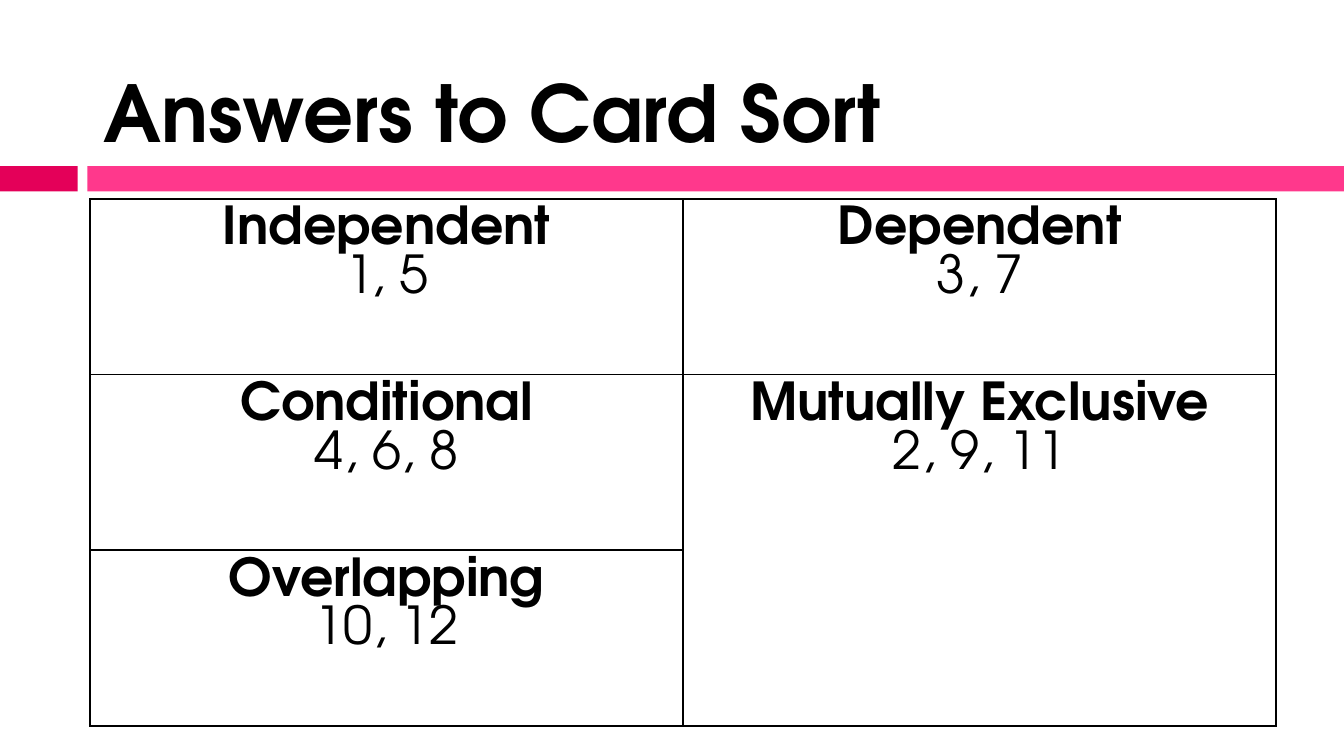
from typing import NamedTuple

from lxml.etree import SubElement
from pptx import Presentation
from pptx.dml.color import RGBColor
from pptx.enum.shapes import MSO_SHAPE as Preset
from pptx.enum.text import MSO_ANCHOR as Anchor, MSO_AUTO_SIZE as AutoSize, PP_ALIGN as Align
from pptx.oxml.ns import qn
from pptx.util import Cm, Pt

FONT = "TeX Gyre Adventor"
BLACK = RGBColor(0x00, 0x00, 0x00)
CRIMSON = RGBColor(0xE4, 0x00, 0x59)
PINK = RGBColor(0xFF, 0x38, 0x8C)

SLIDE_W, SLIDE_H = 25.4, 14.29  # cm
MARGIN = 1.7
TABLE_W, ROW_H = 22.42, 3.32
ROWS, COLS = 3, 2


class Band(NamedTuple):
    left: float
    width: float
    color: RGBColor


class Category(NamedTuple):
    row: int
    col: int
    name: str
    cards: str
    row_span: int = 1


BANDS = [Band(0, 1.47, CRIMSON), Band(1.65, SLIDE_W - 1.65, PINK)]

CATEGORIES = [
    Category(0, 0, "Independent", "1, 5"),
    Category(0, 1, "Dependent", "3, 7"),
    Category(1, 0, "Conditional", "4, 6, 8"),
    Category(1, 1, "Mutually Exclusive", "2, 9, 11", row_span=2),
    Category(2, 0, "Overlapping", "10, 12"),
]


def write(paragraph, text: str, *, size: float, bold: bool = False,
          align: Align = Align.LEFT, spacing=None) -> None:
    paragraph.alignment = align
    paragraph.line_spacing = spacing
    run = paragraph.add_run()
    run.text = text
    run.font.name = FONT
    run.font.size = Pt(size)
    run.font.bold = bold
    run.font.color.rgb = BLACK


def draw_band(slide, band: Band) -> None:
    bar = slide.shapes.add_shape(
        Preset.RECTANGLE, Cm(band.left), Cm(3.14), Cm(band.width), Cm(0.48))
    bar.shadow.inherit = False
    bar.fill.solid()
    bar.fill.fore_color.rgb = band.color
    bar.line.fill.background()


def outline_cell(cell) -> None:
    """Clear the fill and draw a thin black border on every side."""
    cell.fill.background()
    properties = cell._tc.get_or_add_tcPr()
    for position, side in enumerate(("lnL", "lnR", "lnT", "lnB")):
        border = SubElement(properties, qn(f"a:{side}"), w=str(Pt(1)))
        fill = SubElement(border, qn("a:solidFill"))
        SubElement(fill, qn("a:srgbClr"), val=str(BLACK))
        properties.insert(position, border)  # borders come before the fill


def fill_category(table, category: Category) -> None:
    cell = table.cell(category.row, category.col)
    if category.row_span > 1:
        cell.merge(table.cell(category.row + category.row_span - 1, category.col))
    frame = cell.text_frame
    style = dict(size=28, align=Align.CENTER, spacing=Pt(26.25))
    write(frame.paragraphs[0], category.name, bold=True, **style)
    write(frame.add_paragraph(), category.cards, **style)


def main() -> None:
    deck = Presentation()
    deck.slide_width, deck.slide_height = Cm(SLIDE_W), Cm(SLIDE_H)
    slide = deck.slides.add_slide(deck.slide_layouts[5])

    # Coloured bands under the title
    for band in BANDS:
        draw_band(slide, band)

    # Title
    title = slide.shapes.title
    title.left, title.top = Cm(MARGIN), Cm(0.33)
    title.width, title.height = Cm(22.66), Cm(2.79)
    title.text_frame.auto_size = AutoSize.NONE
    title.text_frame.vertical_anchor = Anchor.BOTTOM
    write(title.text_frame.paragraphs[0], "Answers to Card Sort", size=42, bold=True)

    # Table of answers
    table = slide.shapes.add_table(
        ROWS, COLS, Cm(MARGIN), Cm(3.76), Cm(TABLE_W), Cm(ROWS * ROW_H)).table
    table.first_row = table.horz_banding = False
    for cell in table.iter_cells():
        outline_cell(cell)
    for category in CATEGORIES:
        fill_category(table, category)

    deck.save("out.pptx")


if __name__ == "__main__":
    main()
